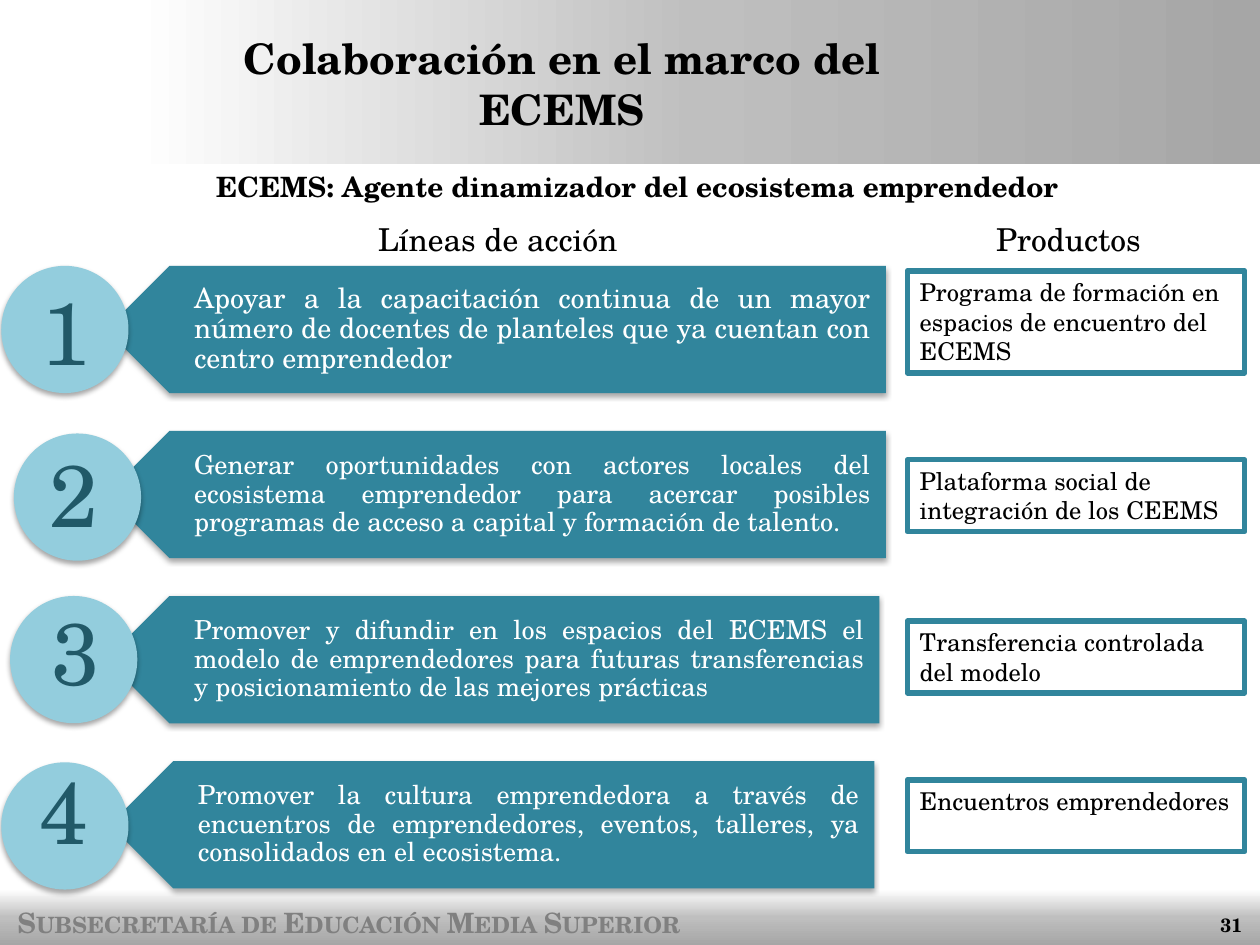
from dataclasses import dataclass

from lxml import etree
from pptx import Presentation
from pptx import util as u
from pptx.dml.color import RGBColor
from pptx.enum import shapes, text
from pptx.oxml import ns

Box = tuple[float, float, float, float]
Align = text.PP_ALIGN
Shape = shapes.MSO_SHAPE


@dataclass(frozen=True)
class Theme:
    """Colours, font and type sizes."""
    font: str = "TeX Gyre Schola"
    black: str = "000000"
    white: str = "FFFFFF"
    gray: str = "808080"
    teal: str = "31859C"
    sky: str = "93CDDD"
    deep: str = "215968"
    fade: tuple = ((0, "FFFFFF"), (50, "BFBFBF"), (100, "A6A6A6"))
    title: int = 24
    head: int = 18
    sub: int = 16
    item: int = 14
    page: int = 11
    digit: int = 50


@dataclass(frozen=True)
class Step:
    """One line of action, its number and its product."""
    words: str
    size: int
    left: float
    right: float
    disc: tuple[float, float]
    digit: tuple[float, float]
    item: str
    top: float
    tall: float


T = Theme()
HIGH, PITCH, FIRST = 1.01, 1.31, 2.11
STEPS = (
    Step("Apoyar a la capacitación continua de un mayor número de docentes de "
         "planteles que ya cuentan con centro emprendedor",
         16, 0.84, 7.03, (0.01, 2.11), (0.22, 2.16),
         "Programa de formación en espacios de encuentro del ECEMS", 2.15, 0.81),
    Step("Generar oportunidades con actores locales del ecosistema emprendedor "
         "para acercar posibles programas de acceso a capital y formación de talento.",
         15, 0.84, 7.03, (0.11, 3.44), (0.28, 3.44),
         "Plataforma social de integración de los CEEMS", 3.65, 0.57),
    Step("Promover y difundir en los espacios del ECEMS el modelo de emprendedores "
         "para futuras transferencias y posicionamiento de las mejores prácticas",
         15, 0.84, 6.98, (0.08, 4.73), (0.3, 4.7),
         "Transferencia controlada del modelo", 4.93, 0.57),
    Step("Promover la cultura emprendedora a través de encuentros de emprendedores, "
         "eventos, talleres, ya consolidados en el ecosistema.",
         15, 0.87, 6.94, (0.01, 6.05), (0.2, 5.96),
         "Encuentros emprendedores", 6.19, 0.57),
)


def rgb(code: str) -> RGBColor:
    """Turn a hex code into a colour."""
    return RGBColor.from_string(code)


def place(shape, box: Box) -> None:
    """Move and size a shape in inches."""
    shape.left, shape.top, shape.width, shape.height = map(u.Inches, box)


def write(shape, words: str, size: int, color: str = T.black, bold: bool = False,
          align=Align.LEFT, anchor=text.MSO_ANCHOR.TOP, wrap: bool = True):
    """Fill a shape with one formatted paragraph and return it."""
    frame = shape.text_frame
    frame.text = words
    frame.word_wrap = wrap
    frame.auto_size = text.MSO_AUTO_SIZE.NONE
    frame.vertical_anchor = anchor
    para = frame.paragraphs[0]
    para.alignment = align
    font = para.font
    font.name, font.size, font.bold = T.font, u.Pt(size), bold
    font.color.rgb = rgb(color)
    return para


def label(slide, box: Box, words: str, size: int, **style):
    """Add a text box and return it with its paragraph."""
    shape = slide.shapes.add_textbox(*map(u.Inches, box))
    return shape, write(shape, words, size, **style)


def solid(slide, kind, box: Box, color: str | None = None):
    """Add a preset shape with no line and an optional fill."""
    shape = slide.shapes.add_shape(kind, *map(u.Inches, box))
    shape.shadow.inherit = False
    shape.line.fill.background()
    if color:
        shape.fill.solid()
        shape.fill.fore_color.rgb = rgb(color)
    else:
        shape.fill.background()
    return shape


def tint(parent, color: str):
    """Add a colour element to an XML parent."""
    return etree.SubElement(parent, ns.qn("a:srgbClr"), val=color)


def shade(shape) -> None:
    """Give a shape a soft shadow below."""
    effect = shape.element.spPr.find(ns.qn("a:effectLst"))
    outer = etree.SubElement(effect, ns.qn("a:outerShdw"), blurRad=str(u.Pt(3.1)),
                             dist=str(u.Pt(1.8)), dir="5400000", rotWithShape="0")
    etree.SubElement(tint(outer, T.black), ns.qn("a:alpha"), val="35000")


def band(slide, box: Box, angle: int) -> None:
    """Add a gray gradient band."""
    shape = solid(slide, Shape.RECTANGLE, box)
    shape.fill.gradient()
    shape.fill.gradient_angle = angle
    stops = shape.element.spPr.find(f".//{ns.qn('a:gsLst')}")
    for stop in list(stops):
        stops.remove(stop)
    for pos, color in T.fade:
        tint(etree.SubElement(stops, ns.qn("a:gs"), pos=str(pos * 1000)), color)


def draw(slide, num: int, step: Step) -> None:
    """Draw one row with arrow, disc, number and product."""
    top = FIRST + num * PITCH
    arrow = solid(slide, Shape.PENTAGON,
                  (step.left, top, step.right - step.left, HIGH), T.teal)
    arrow.rotation = 180
    shade(arrow)
    start = step.left + 0.25
    body, para = label(slide, (start, top, step.right - start, HIGH), step.words,
                       step.size, color=T.white, align=Align.JUSTIFY,
                       anchor=text.MSO_ANCHOR.MIDDLE)
    para.line_spacing = 0.9
    frame = body.text_frame
    frame.margin_left, frame.margin_right = u.Inches(0.45), u.Inches(0.12)
    frame.margin_top = frame.margin_bottom = u.Inches(0.06)
    shade(solid(slide, Shape.OVAL, (*step.disc, HIGH, HIGH), T.sky))
    label(slide, (*step.digit, 0.61, 0.94), str(num + 1), T.digit,
          color=T.deep, align=Align.CENTER)
    card = solid(slide, Shape.RECTANGLE, (7.2, step.top, 2.68, step.tall))
    card.line.color.rgb = rgb(T.teal)
    card.line.width = u.Pt(3)
    write(card, step.item, T.item)


def main() -> None:
    """Build and save the slide."""
    deck = Presentation()
    deck.slide_width, deck.slide_height = u.Inches(10), u.Inches(7.5)
    slide = deck.slides.add_slide(deck.slide_layouts[5])
    band(slide, (0, 7.06, 10, 0.44), 270)
    band(slide, (1.06, 0, 8.94, 1.3), 0)
    title = slide.shapes.title
    place(title, (1.14, 0.21, 6.64, 0.5))
    write(title, "Colaboración en el marco del ECEMS", T.title, bold=True,
          align=Align.CENTER)
    slide.shapes.element.append(title.element)
    foot = label(slide, (0.04, 7.14, 6.46, 0.37),
                 "Subsecretaría de Educación Media Superior", T.sub,
                 color=T.gray, bold=True)[1]
    foot.runs[0].font._element.set("cap", "small")
    label(slide, (7.63, 7.14, 2.33, 0.4), "31", T.page, bold=True,
          align=Align.RIGHT, anchor=text.MSO_ANCHOR.MIDDLE)
    label(slide, (0.12, 1.3, 9.88, 0.64),
          "ECEMS: Agente dinamizador del ecosistema emprendedor", T.sub,
          bold=True, align=Align.CENTER)
    for left, width, words in ((2.9, 2.1, "Líneas de acción"), (7.78, 1.4, "Productos")):
        label(slide, (left, 1.7, width, 0.4), words, T.head,
              align=Align.CENTER, wrap=False)
    for num, step in enumerate(STEPS):
        draw(slide, num, step)
    deck.save("out.pptx")


if __name__ == "__main__":
    main()
